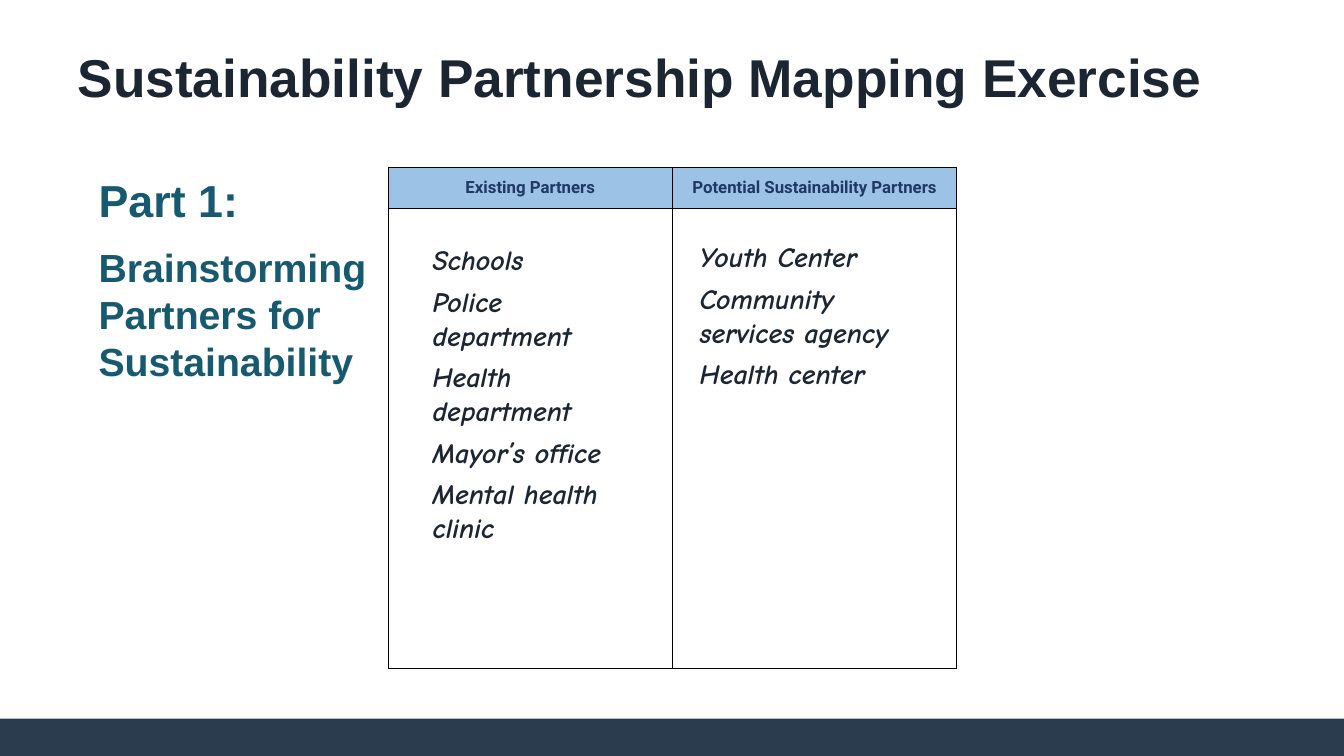
from lxml import etree
from pptx import Presentation
from pptx import util as u
from pptx.dml.color import RGBColor
from pptx.enum import shapes, text
from pptx.oxml import ns

INK = RGBColor(0x1C, 0x25, 0x32)
TEAL = RGBColor(0x17, 0x5A, 0x6F)
NAVY = RGBColor(0x1F, 0x38, 0x64)
SKY = RGBColor(0x9C, 0xC2, 0xE5)
SLATE = RGBColor(0x2A, 0x3C, 0x4E)
BLACK = RGBColor(0, 0, 0)

TITLE = dict(name="Arial", size=u.Pt(38), bold=True)
PART = dict(name="Arial", size=u.Pt(32), bold=True)
TOPIC = dict(PART, size=u.Pt(28))
HEADING = dict(name="Roboto", size=u.Pt(12), bold=True)
PARTNER = dict(name="Comic Neue", size=u.Pt(20), bold=True, italic=True)

LEFT = text.PP_ALIGN.LEFT
CENTER = text.PP_ALIGN.CENTER


def set_all(target, values):
    for key, value in values.items():
        setattr(target, key, value)


def inches(*lengths):
    return [u.Inches(length) for length in lengths]


class PartnerSlide:
    def __init__(self, deck, layout):
        self.slide = deck.slides.add_slide(deck.slide_layouts[layout])
        self.placeholders = self.slide.placeholders

    def add_words(self, paragraph, words, font, color, **layout):
        run = paragraph.add_run()
        run.text = words
        set_all(run.font, font)
        run.font.color.rgb = color
        set_all(paragraph, layout)

    def fill_frame(self, frame, lines, color, **layout):
        set_all(frame, dict(word_wrap=True, auto_size=text.MSO_AUTO_SIZE.NONE,
                            vertical_anchor=text.MSO_ANCHOR.TOP))
        for index, (words, font) in enumerate(lines):
            paragraph = frame.add_paragraph() if index else frame.paragraphs[0]
            self.add_words(paragraph, words, font, color, alignment=LEFT, **layout)

    def place(self, index, at):
        holder = self.placeholders[index]
        set_all(holder, dict(zip(("left", "top", "width", "height"), inches(*at))))
        return holder.text_frame

    def title(self, words, at):
        self.fill_frame(self.place(0, at), [(words, TITLE)], INK, line_spacing=0.9)

    def partners(self, index, names, at):
        frame = self.place(index, at)
        self.fill_frame(frame, [(name, PARTNER) for name in names], INK,
                        space_before=u.Pt(0), space_after=u.Pt(5.75))
        for paragraph in frame.paragraphs:
            properties = paragraph._p.get_or_add_pPr()
            properties.set("marL", "0")
            properties.set("indent", "0")
            etree.SubElement(properties, ns.qn("a:buNone"))

    def label(self, lines, at):
        box = self.slide.shapes.add_textbox(*inches(*at))
        self.fill_frame(box.text_frame, lines, TEAL,
                        space_before=u.Pt(6), space_after=u.Pt(6))

    def band(self, at, color):
        bar = self.slide.shapes.add_shape(shapes.MSO_SHAPE.RECTANGLE, *inches(*at))
        bar.shadow.inherit = False
        bar.fill.solid()
        bar.fill.fore_color.rgb = color
        bar.line.fill.background()

    def border(self, cell):
        properties = cell._tc.get_or_add_tcPr()
        for position, side in enumerate(("lnL", "lnR", "lnT", "lnB")):
            line = etree.Element(ns.qn("a:" + side), w=str(u.Pt(1)))
            solid = etree.SubElement(line, ns.qn("a:solidFill"))
            etree.SubElement(solid, ns.qn("a:srgbClr"), val=str(BLACK))
            properties.insert(position, line)

    def grid(self, headings, at, heights):
        table = self.slide.shapes.add_table(
            len(heights), len(headings), *inches(*at)).table
        set_all(table, dict(first_row=False, horz_banding=False))
        for row, height in zip(table.rows, heights):
            row.height = u.Inches(height)
        for cell in table.iter_cells():
            cell.fill.background()
            self.border(cell)
        for column, heading in enumerate(headings):
            cell = table.cell(0, column)
            cell.fill.solid()
            cell.fill.fore_color.rgb = SKY
            set_all(cell, dict(margin_left=u.Inches(0.06), margin_right=u.Inches(0.06),
                               margin_top=0, margin_bottom=0,
                               vertical_anchor=text.MSO_ANCHOR.MIDDLE))
            self.add_words(cell.text_frame.paragraphs[0], heading, HEADING, NAVY,
                           alignment=CENTER)

    def bring_forward(self, *indexes):
        tree = self.slide.shapes._spTree
        for index in indexes:
            tree.append(self.placeholders[index]._element)


def main():
    deck = Presentation()
    set_all(deck, dict(slide_width=u.Inches(13.33), slide_height=u.Inches(7.5)))
    page = PartnerSlide(deck, 3)
    page.band((0, 7.13, 13.33, 0.38), SLATE)
    page.title("Sustainability Partnership Mapping Exercise", (0.67, 0.46, 12, 1.28))
    page.grid(("Existing Partners", "Potential Sustainability Partners"),
              (3.85, 1.66, 5.64, 4.97), (0.41, 4.56))
    page.label([("Part 1:", PART), ("Brainstorming Partners for Sustainability", TOPIC)],
               (0.88, 1.66, 3.24, 4.39))
    page.partners(1, ("Schools", "Police department", "Health department",
                      "Mayor’s office", "Mental health clinic"),
                  (4.19, 2.36, 2.3, 2.79))
    page.partners(2, ("Youth Center", "Community services agency", "Health center"),
                  (6.84, 2.33, 2.3, 1.95))
    page.bring_forward(1, 2)
    deck.save("out.pptx")


if __name__ == "__main__":
    main()
